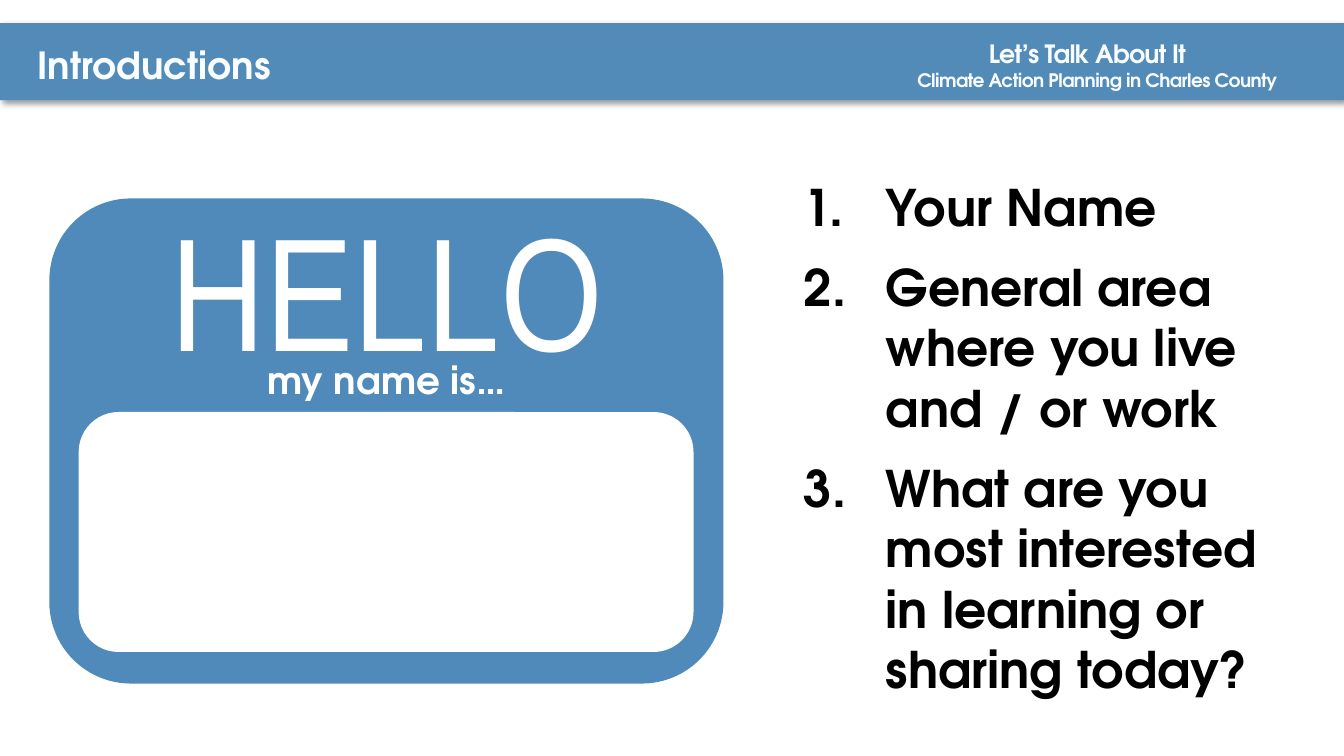
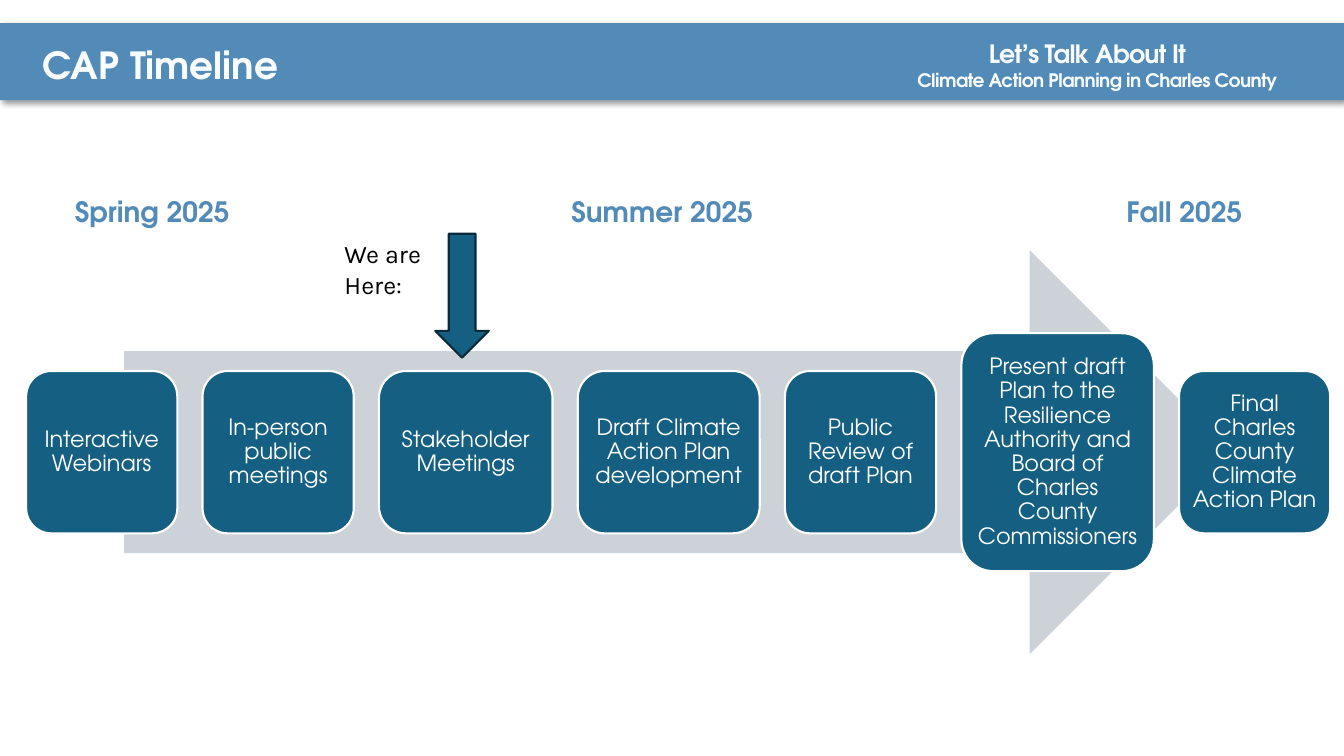
from lxml import etree
from pptx import Presentation
from pptx.dml.color import RGBColor
from pptx.enum.shapes import MSO_SHAPE
from pptx.enum.text import MSO_ANCHOR, MSO_AUTO_SIZE, PP_ALIGN
from pptx.oxml import parse_xml
from pptx.util import Pt

COLORS = {
    "band": "528AB8",
    "header": "FAFDFF",
    "badge": "4F8ABA",
    "arrow": "CCD2D8",
    "step": "156082",
    "step_edge": "092A39",
    "white": "FFFFFF",
    "black": "000000",
}
FONT = "TeX Gyre Adventor"
NS = "http://schemas.openxmlformats.org/drawingml/2006/main"
SHADOW = (
    f'<a:effectLst xmlns:a="{NS}"><a:outerShdw blurRad="50800" dist="38100" '
    'dir="2700000" algn="tl" rotWithShape="0"><a:srgbClr val="000000">'
    '<a:alpha val="40000"/></a:srgbClr></a:outerShdw></a:effectLst>'
)


def add_shape(s, kind, box, fill, line=None):
    sp = s.shapes.add_shape(kind, *[Pt(v) for v in box])
    sp.shadow.inherit = False
    sp.fill.solid()
    sp.fill.fore_color.rgb = RGBColor.from_string(COLORS[fill])
    if line:
        sp.line.color.rgb = RGBColor.from_string(COLORS[line])
        sp.line.width = Pt(1.5)
    else:
        sp.line.fill.background()
    return sp


def write(sp, lines, size, color, bold=True, font=FONT, align=PP_ALIGN.LEFT,
          inset=None, spacing=None, anchor=MSO_ANCHOR.TOP):
    tf = sp.text_frame
    tf.word_wrap = True
    tf.auto_size = MSO_AUTO_SIZE.NONE
    tf.vertical_anchor = anchor
    if inset is not None:
        tf.margin_left = tf.margin_right = Pt(inset)
        tf.margin_top = tf.margin_bottom = Pt(inset)
    for i, line in enumerate(lines):
        p = tf.add_paragraph() if i else tf.paragraphs[0]
        p.alignment = align
        if spacing:
            p.line_spacing = spacing
        r = p.add_run()
        r.text = line
        r.font.name = font
        r.font.size = Pt(size)
        r.font.bold = bold
        r.font.color.rgb = RGBColor.from_string(COLORS[color])
    return tf


prs = Presentation()
prs.slide_width, prs.slide_height = Pt(960), Pt(540)

slides = []
for title, left in [("Introductions", 26.6), ("CAP Timeline", 30.2)]:
    s = prs.slides.add_slide(prs.slide_layouts[5])
    slides.append(s)
    band = add_shape(s, MSO_SHAPE.RECTANGLE, (0, 16.5, 960, 55), "band")
    effects = band._element.spPr.find(f"{{{NS}}}effectLst")
    band._element.spPr.replace(effects, parse_xml(SHADOW))
    s.shapes._spTree.insert(2, band._element)

    sp = s.shapes.title
    sp.left, sp.top, sp.width, sp.height = Pt(left), Pt(24.5), Pt(585), Pt(34)
    write(sp, [title], 26.7, "header", inset=0, spacing=Pt(37.3))

    for text, box, size, leading, tracking in [
        ("Let’s Talk About It", (706.3, 23, 250, 24), 18, 25.9, -50),
        ("Climate Action Planning in Charles County", (655.2, 46, 300, 18), 13.3, 19.2, -40),
    ]:
        sp = s.shapes.add_textbox(*[Pt(v) for v in box])
        tf = write(sp, [text], size, "header", inset=0, spacing=Pt(leading))
        tf.paragraphs[0].runs[0].font._element.set("spc", str(tracking))

intro, timeline = slides

add_shape(intro, MSO_SHAPE.ROUNDED_RECTANGLE, (36, 142.5, 480, 345), "badge", "badge")
sp = intro.shapes.add_textbox(Pt(86.4), Pt(132.5), Pt(379.5), Pt(147))
write(sp, ["HELLO"], 115, "white", bold=False, font="Arial Narrow", align=PP_ALIGN.CENTER)
sp = intro.shapes.add_textbox(Pt(179), Pt(250), Pt(194), Pt(34))
write(sp, ["my name is…"], 26.7, "white", align=PP_ALIGN.CENTER, inset=0, spacing=Pt(37.3))
add_shape(intro, MSO_SHAPE.ROUNDED_RECTANGLE, (56.2, 294.3, 439.2, 171.4), "white")

sp = intro.shapes.add_textbox(Pt(558.7), Pt(118), Pt(360), Pt(384.5))
tf = write(sp, [
    "Your Name",
    "General area where you live and / or work",
    "What are you most interested in learning or sharing today?",
], 36, "black")
for i, p in enumerate(tf.paragraphs):
    pPr = p._p.get_or_add_pPr()
    pPr.set("marL", str(Pt(67)))
    pPr.set("indent", str(-Pt(58.5)))
    etree.SubElement(pPr, f"{{{NS}}}buAutoNum", type="arabicPeriod")
    p.space_before = Pt(4 if i else 0)
    p.space_after = Pt(10)
tf.margin_top = Pt(7.6)

add_shape(timeline, MSO_SHAPE.RIGHT_ARROW, (88.6, 178.6, 791.3, 288.7), "arrow")
left, gap, middle = 18.7, 18, 323
for text, width, height in [
    ("Interactive Webinars", 108, 116),
    ("In-person public meetings", 108, 116),
    ("Stakeholder Meetings", 124, 116),
    ("Draft Climate Action Plan development", 130, 116),
    ("Public Review of draft Plan", 108, 116),
    ("Present draft Plan to the Resilience Authority and Board of Charles County Commissioners", 137.5, 170),
    ("Final Charles County Climate Action Plan", 108, 116),
]:
    box = (left, middle - height / 2, width, height)
    sp = add_shape(timeline, MSO_SHAPE.ROUNDED_RECTANGLE, box, "step", "white")
    write(sp, [text], 16, "white", bold=False, align=PP_ALIGN.CENTER,
          inset=4.5, spacing=0.9, anchor=MSO_ANCHOR.MIDDLE)
    left += width + gap

for season, left in [("Spring 2025", 30.2), ("Summer 2025", 394.5), ("Fall 2025", 767.5)]:
    sp = timeline.shapes.add_textbox(Pt(left), Pt(135.5), Pt(157), Pt(31.5))
    write(sp, [season], 20, "band", align=PP_ALIGN.CENTER)

add_shape(timeline, MSO_SHAPE.DOWN_ARROW, (311, 167, 38.2, 88.5), "step", "step_edge")
sp = timeline.shapes.add_textbox(Pt(239), Pt(167), Pt(72), Pt(51))
write(sp, ["We are Here:"], 18, "black", bold=False, font="Karla")

prs.save("out.pptx")
